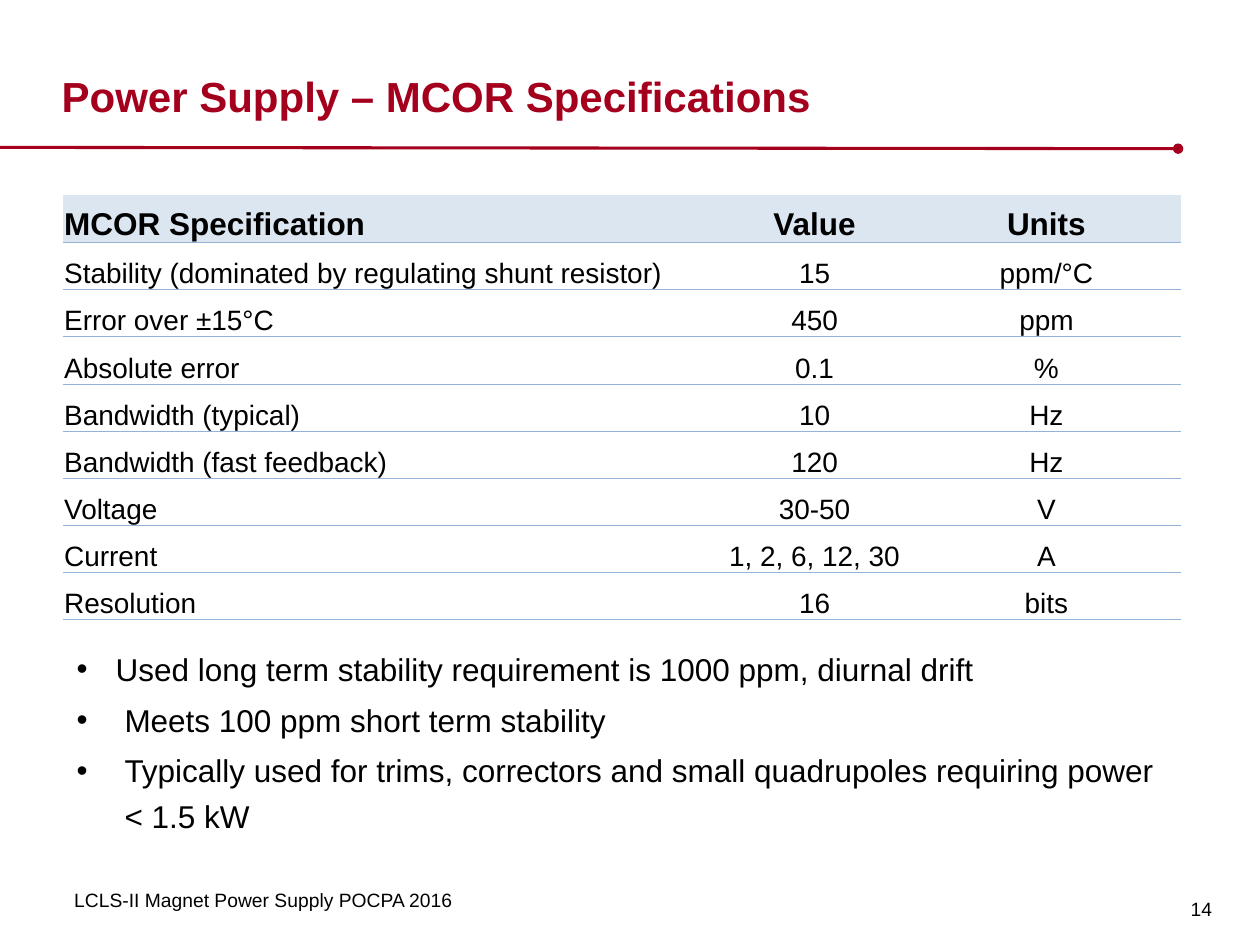
from dataclasses import dataclass

from lxml import etree
from pptx import Presentation, util as u
from pptx.dml.color import RGBColor
from pptx.enum import shapes, text
from pptx.oxml import parse_xml
from pptx.oxml.ns import nsdecls, qn

Inches = u.Inches


@dataclass(frozen=True)
class Theme:
    font: str = "Arial"
    red: str = "A4001D"
    ink: str = "000000"
    head: str = "DCE6F1"
    rule: str = "95B3D7"
    title: int = 24
    body: int = 18
    cell: int = 16
    small: int = 11


@dataclass(frozen=True)
class Spec:
    name: str
    value: str
    unit: str


@dataclass(frozen=True)
class Bullet:
    words: str
    indent: float = 0.38


@dataclass(frozen=True)
class Label:
    words: str
    box: tuple[float, float, float, float]
    size: int
    color: str = Theme.ink
    bold: bool = False
    anchor: text.MSO_ANCHOR = text.MSO_ANCHOR.TOP
    inset: tuple[float, float, float, float] = (0.1, 0.05, 0.1, 0.05)


THEME = Theme()
NO_GRID = "{2D5ABB26-0587-4C30-8999-92F81FD0307C}"
SIDES = ("left", "top", "right", "bottom")
COLS = (5.19, 1.55, 2.13)

HEAD = Spec("MCOR Specification", "Value", "Units")
SPECS = [
    Spec("Stability (dominated by regulating shunt resistor)", "15", "ppm/°C"),
    Spec("Error over ±15°C", "450", "ppm"),
    Spec("Absolute error", "0.1", "%"),
    Spec("Bandwidth (typical)", "10", "Hz"),
    Spec("Bandwidth (fast feedback)", "120", "Hz"),
    Spec("Voltage", "30-50", "V"),
    Spec("Current", "1, 2, 6, 12, 30", "A"),
    Spec("Resolution", "16", "bits"),
]
BULLETS = [
    Bullet("Used long term stability requirement is 1000 ppm, diurnal drift", 0.31),
    Bullet("Meets 100 ppm short term stability"),
    Bullet("Typically used for trims, correctors and small quadrupoles "
           "requiring power < 1.5 kW"),
]
LABELS = [
    Label("14", (9.37, 6.91, 0.35, 0.59), THEME.small,
          anchor=text.MSO_ANCHOR.MIDDLE, inset=(0.08, 0.06, 0.08, 0.05)),
    Label("Power Supply – MCOR Specifications", (0.49, 0.14, 8.86, 0.82),
          THEME.title, THEME.red, True, text.MSO_ANCHOR.BOTTOM, (0, 0, 0, 0)),
    Label("LCLS-II Magnet Power Supply POCPA 2016", (0.49, 7, 4.51, 0.34),
          THEME.small),
]


def write(para, words: str, size: int, color: str = THEME.ink,
          bold: bool = False) -> None:
    run = para.add_run()
    run.text = words
    style = {"name": THEME.font, "size": u.Pt(size), "bold": bold}
    for key, value in style.items():
        setattr(run.font, key, value)
    run.font.color.rgb = RGBColor.from_string(color)


def pad(item, inset: tuple[float, float, float, float]) -> None:
    """Set the inner margins of a text frame or a cell."""
    for side, size in zip(SIDES, inset):
        setattr(item, f"margin_{side}", Inches(size))


def add_box(slide, box: tuple[float, float, float, float]):
    frame = slide.shapes.add_textbox(*map(Inches, box)).text_frame
    frame.word_wrap = True
    return frame


def add_label(slide, label: Label) -> None:
    frame = add_box(slide, label.box)
    frame.vertical_anchor = label.anchor
    pad(frame, label.inset)
    write(frame.paragraphs[0], label.words, label.size, label.color, label.bold)


def add_rule(slide) -> None:
    """Draw the title rule with its round end."""
    line = slide.shapes.add_connector(
        shapes.MSO_CONNECTOR.STRAIGHT,
        Inches(0), Inches(1.17), Inches(9.35), Inches(1.18))
    line.line.color.rgb = RGBColor.from_string(THEME.red)
    line.line.width = u.Pt(1.75)
    etree.SubElement(line.line._get_or_add_ln(), qn("a:tailEnd"), type="oval")
    etree.SubElement(line._element.spPr, qn("a:effectLst"))


def add_bullets(slide) -> None:
    frame = add_box(slide, (0.51, 5.05, 8.82, 2.06))
    for i, item in enumerate(BULLETS):
        para = frame.add_paragraph() if i else frame.paragraphs[0]
        para.line_spacing = 1.2
        para.space_after = u.Pt(3)
        props = para._p.get_or_add_pPr()
        props.set("marL", str(Inches(item.indent)))
        props.set("indent", str(-Inches(item.indent)))
        etree.SubElement(props, qn("a:buFont"), typeface=THEME.font)
        etree.SubElement(props, qn("a:buChar"), char="•")
        write(para, item.words, THEME.body)


def fill_cell(cell, words: str, head: bool, center: bool) -> None:
    pad(cell, (0.01, 0.01, 0.01, 0))
    cell.vertical_anchor = text.MSO_ANCHOR.BOTTOM
    if head:
        cell.fill.solid()
        cell.fill.fore_color.rgb = RGBColor.from_string(THEME.head)
    else:
        cell.fill.background()
    cell._tc.get_or_add_tcPr().insert(0, parse_xml(
        f'<a:lnB {nsdecls("a")} w="{u.Pt(0.5)}"><a:solidFill>'
        f'<a:srgbClr val="{THEME.rule}"/></a:solidFill></a:lnB>'))
    para = cell.text_frame.paragraphs[0]
    para.alignment = text.PP_ALIGN.CENTER if center else text.PP_ALIGN.LEFT
    write(para, words, THEME.body if head else THEME.cell, bold=head)


def add_specs(slide) -> None:
    rows = [HEAD, *SPECS]
    table = slide.shapes.add_table(
        len(rows), len(COLS), Inches(0.5), Inches(1.55),
        Inches(sum(COLS)), Inches(3.37)).table
    table.first_row = table.horz_banding = False
    table._tbl.tblPr.find(qn("a:tableStyleId")).text = NO_GRID
    for col, width in zip(table.columns, COLS):
        col.width = Inches(width)
    for r, row in enumerate(rows):
        for c, words in enumerate((row.name, row.value, row.unit)):
            fill_cell(table.cell(r, c), words, r == 0, c > 0)


def main() -> None:
    deck = Presentation()
    deck.slide_width, deck.slide_height = Inches(10), Inches(7.5)
    slide = deck.slides.add_slide(deck.slide_layouts[6])
    add_rule(slide)
    for label in LABELS:
        add_label(slide, label)
    add_bullets(slide)
    add_specs(slide)
    deck.save("out.pptx")


if __name__ == "__main__":
    main()
